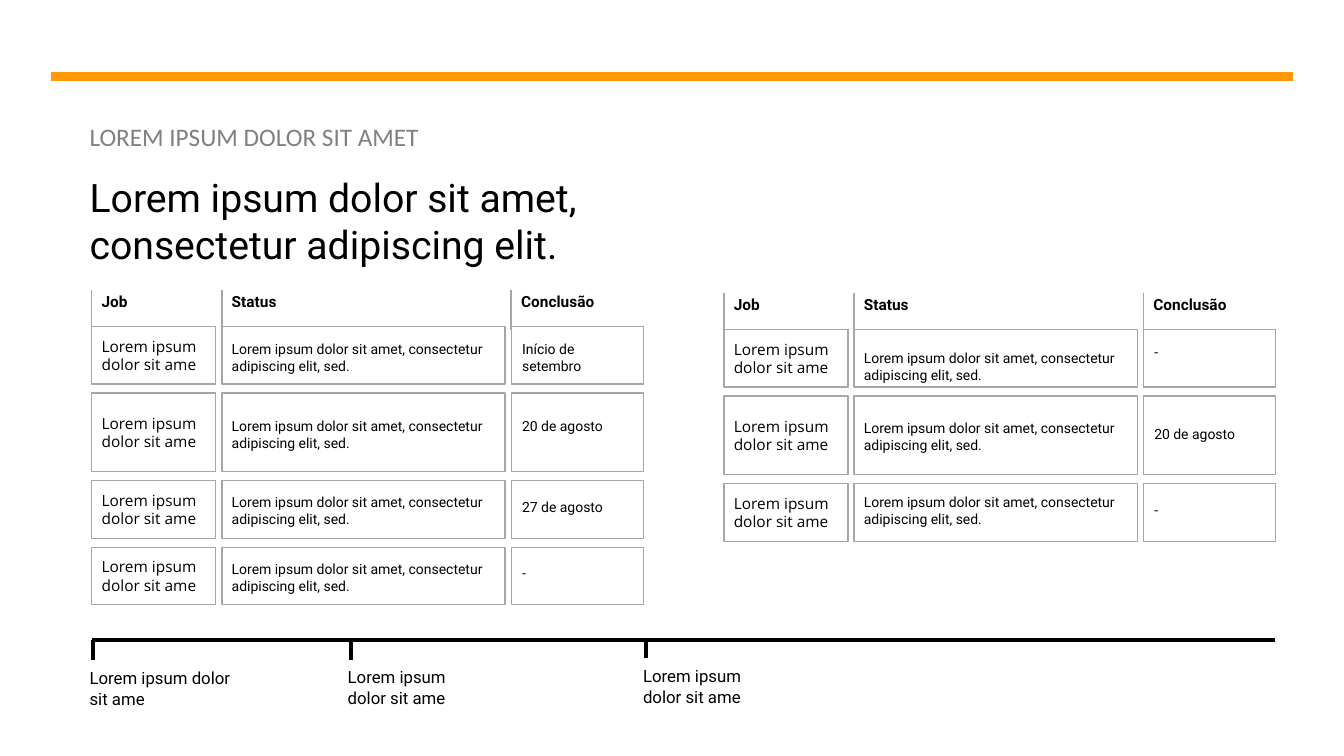
import pptx
import pptx.util
import pptx.dml.color
import pptx.enum.shapes
import pptx.enum.text
import pptx.oxml.ns
from dataclasses import dataclass
from lxml import etree
from pptx.util import Inches


@dataclass(frozen=True)
class Theme:
    accent: str = "FF9707"
    ink: str = "000000"
    muted: str = "808080"
    border: str = "A6A6A6"
    body_font: str = "Roboto"
    job_font: str = "Open Sans"
    kicker_font: str = "Calibri"
    title: int = 28
    kicker: int = 18
    label: int = 12
    heading: int = 11
    body: int = 10


T = Theme()
SHORT = "Lorem ipsum dolor sit ame"
STATUS = "Lorem ipsum dolor sit amet, consectetur adipiscing elit, sed."
JOB_W, STATUS_W, DONE_W = 1.23, 2.81, 1.31
STATUS_X, DONE_X = 1.29, 4.16
ROW_GAP = 0.09
HEADINGS = [("Job", 0, 0.8), ("Status", STATUS_X, 0.8), ("Conclusão", DONE_X, 1.01)]

# Rows: height, status text offset, conclusion, its offset and its text height
LEFT_ROWS = [
    (0.57, 0.09, "Início de setembro", 0.09, 0.44),
    (0.78, 0.19, "20 de agosto", 0.19, 0.27),
    (0.57, 0.08, "27 de agosto", 0.13, 0.27),
    (0.57, 0.08, "-", 0.12, 0.27),
]
RIGHT_ROWS = [
    (0.57, 0.15, "-", 0.09, 0.27),
    (0.78, 0.18, "20 de agosto", 0.24, 0.27),
    (0.57, 0.05, "-", 0.13, 0.27),
]
# Milestones: tick x, tick top, label left, label top, label width
MILESTONES = [
    (0.92, 6.35, 0.79, 6.58, 1.68),
    (3.48, 6.35, 3.35, 6.57, 1.45),
    (6.41, 6.33, 6.28, 6.56, 1.36),
]


def rgb(color):
    return pptx.dml.color.RGBColor.from_string(color)


def write(tf, text, size, font, color, bold):
    tf.word_wrap = True
    p = tf.paragraphs[0]
    p.text = text
    p.font.size = pptx.util.Pt(size)
    p.font.name = font
    p.font.bold = bold
    p.font.color.rgb = rgb(color)
    return p


def add_text(s, x, y, w, h, text, size, font=T.body_font, color=T.ink, bold=False):
    sp = s.shapes.add_textbox(Inches(x), Inches(y), Inches(w), Inches(h))
    write(sp.text_frame, text, size, font, color, bold)
    sp.text_frame.auto_size = pptx.enum.text.MSO_AUTO_SIZE.SHAPE_TO_FIT_TEXT


def add_line(s, x1, y1, x2, y2, color, width):
    line = s.shapes.add_connector(
        pptx.enum.shapes.MSO_CONNECTOR.STRAIGHT,
        Inches(x1), Inches(y1), Inches(x2), Inches(y2))
    line.line.color.rgb = rgb(color)
    line.line.width = pptx.util.Pt(width)
    etree.SubElement(line._element.spPr, pptx.oxml.ns.qn("a:effectLst"))


def add_cell(s, x, y, w, h, kind=pptx.enum.shapes.MSO_SHAPE.RECTANGLE):
    sp = s.shapes.add_shape(kind, Inches(x), Inches(y), Inches(w), Inches(h))
    sp.shadow.inherit = False
    sp.fill.background()
    sp.line.color.rgb = rgb(T.border)
    sp.line.width = pptx.util.Pt(1)
    return sp


def add_job(s, x, y, h):
    sp = add_cell(s, x, y, JOB_W, h, pptx.enum.shapes.MSO_SHAPE.ROUNDED_RECTANGLE)
    sp.adjustments[0] = 0
    tf = sp.text_frame
    tf.vertical_anchor = pptx.enum.text.MSO_ANCHOR.MIDDLE
    p = write(tf, SHORT, T.heading, T.job_font, T.ink, False)
    p.alignment = pptx.enum.text.PP_ALIGN.LEFT


def add_job_grid(s, left, top, rows):
    for heading, dx, w in HEADINGS:
        add_line(s, left + dx, top + 0.03, left + dx, top - 0.36, T.border, 1)
        add_text(s, left + dx, top - 0.39, w, 0.29, heading, T.heading, bold=True)
    y = top
    for h, status_dy, done, done_dy, done_h in rows:
        add_job(s, left, y, h)
        add_cell(s, left + STATUS_X, y, STATUS_W, h)
        add_text(s, left + STATUS_X, y + status_dy, 2.77, 0.44, STATUS, T.body)
        add_cell(s, left + DONE_X, y, DONE_W, h)
        add_text(s, left + DONE_X + 0.01, y + done_dy, 1.2, done_h, done, T.body)
        y += h + ROW_GAP


def add_timeline(s):
    add_line(s, 12.65, 6.35, 0.91, 6.35, T.ink, 3)
    for x, tick_y, label_x, label_y, w in MILESTONES:
        add_line(s, x, tick_y, x, tick_y + 0.2, T.ink, 3)
        add_text(s, label_x, label_y, w, 0.5, SHORT, T.label)


def main():
    prs = pptx.Presentation()
    prs.slide_width, prs.slide_height = Inches(13.33), Inches(7.5)
    s = prs.slides.add_slide(prs.slide_layouts[6])

    # Top rule and titles
    add_line(s, 12.82, 0.76, 0.51, 0.76, T.accent, 6)
    add_text(s, 0.79, 1.15, 5.87, 0.4, "LOREM IPSUM DOLOR SIT AMET",
             T.kicker, T.kicker_font, T.muted)
    add_text(s, 0.79, 1.67, 6.15, 1.04,
             "Lorem ipsum dolor sit amet, consectetur adipiscing elit.", T.title)

    # Job status grids
    add_job_grid(s, 0.91, 3.24, LEFT_ROWS)
    add_job_grid(s, 7.18, 3.27, RIGHT_ROWS)

    # Timeline
    add_timeline(s)
    prs.save("out.pptx")


if __name__ == "__main__":
    main()
